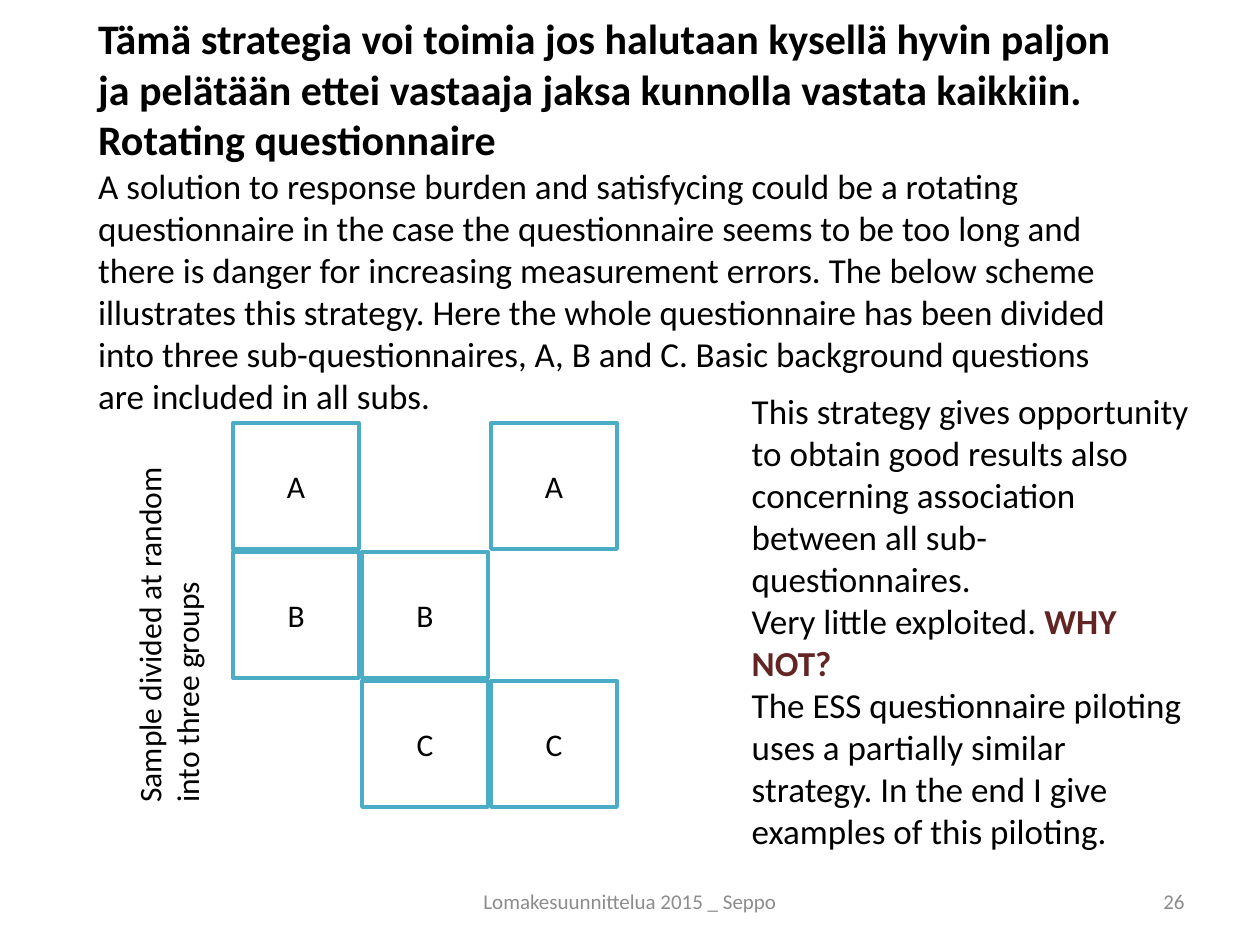
from pptx import Presentation
from pptx.dml.color import RGBColor
from pptx.enum.shapes import MSO_SHAPE
from pptx.enum.text import MSO_ANCHOR, PP_ALIGN
from pptx.util import Pt

BLACK = RGBColor(0x00, 0x00, 0x00)
WHITE = RGBColor(0xFF, 0xFF, 0xFF)
GREY = RGBColor(0x8C, 0x8C, 0x8C)
TEAL = RGBColor(0x4B, 0xAC, 0xC6)
MAROON = RGBColor(0x63, 0x25, 0x23)


def write(frame, lines, align=PP_ALIGN.LEFT, color=BLACK):
    for index, (text, size, bold) in enumerate(lines):
        para = frame.paragraphs[0] if index == 0 else frame.add_paragraph()
        para.alignment = align
        para.font.name = "Calibri"
        para.font.size = Pt(size)
        para.font.bold = bold
        para.font.color.rgb = color
        para.add_run().text = text


def add_text(left, top, width, height, lines, align=PP_ALIGN.LEFT, color=BLACK):
    box = page.shapes.add_textbox(Pt(left), Pt(top), Pt(width), Pt(height))
    box.text_frame.word_wrap = True
    write(box.text_frame, lines, align, color)
    return box


deck = Presentation()
deck.slide_width = Pt(720)
deck.slide_height = Pt(540)
page = deck.slides.add_slide(deck.slide_layouts[6])

footer = add_text(246, 500.5, 228, 28.75, [("Lomakesuunnittelua 2015 _ Seppo", 12, False)],
                  PP_ALIGN.CENTER, GREY)
number = add_text(516, 500.5, 168, 28.75, [("26", 12, False)], PP_ALIGN.RIGHT, GREY)
for box in (footer, number):
    box.text_frame.vertical_anchor = MSO_ANCHOR.MIDDLE

add_text(49, 3.8, 607, 240, [
    ("Tämä strategia voi toimia jos halutaan kysellä hyvin paljon ja pelätään "
     "ettei vastaaja jaksa kunnolla vastata kaikkiin.", 24, True),
    ("Rotating questionnaire", 24, True),
    ("A solution to response burden and satisfycing could be a rotating questionnaire "
     "in the case the questionnaire seems to be too long and there is danger for "
     "increasing measurement errors. The below scheme illustrates this strategy. Here "
     "the whole questionnaire has been divided into three sub-questionnaires, A, B and C. "
     "Basic background questions are included in all subs.", 20, False),
])

GRID_LEFT, GRID_TOP, STEP, SIDE = 133.2, 241.8, 73.7, 72
SCHEME = ["A A", "BB ", " CC"]
for row, letters in enumerate(SCHEME):
    for column, letter in enumerate(letters):
        if letter == " ":
            continue
        square = page.shapes.add_shape(
            MSO_SHAPE.RECTANGLE, Pt(GRID_LEFT + column * STEP), Pt(GRID_TOP + row * STEP),
            Pt(SIDE), Pt(SIDE))
        square.shadow.inherit = False
        square.fill.solid()
        square.fill.fore_color.rgb = WHITE
        square.line.color.rgb = TEAL
        square.line.width = Pt(2)
        square.text_frame.vertical_anchor = MSO_ANCHOR.MIDDLE
        write(square.text_frame, [(letter, 18, False)], PP_ALIGN.CENTER)

groups = add_text(-10, 334, 212.4, 51, [
    ("Sample divided at random", 18, False),
    ("into three groups", 18, False),
])
groups.text_frame.word_wrap = False
groups.rotation = 270

remarks = add_text(422.5, 219, 266.5, 273.5, [
    ("This strategy gives opportunity to obtain good results also concerning "
     "association between all sub-questionnaires.", 20, False),
    ("Very little exploited. ", 20, False),
    ("The ESS questionnaire piloting uses a partially similar strategy. In the end "
     "I give examples of this piloting.", 20, False),
])
span = remarks.text_frame.paragraphs[1].add_run()
span.text = "WHY NOT?"
span.font.bold = True
span.font.color.rgb = MAROON

deck.save("out.pptx")
